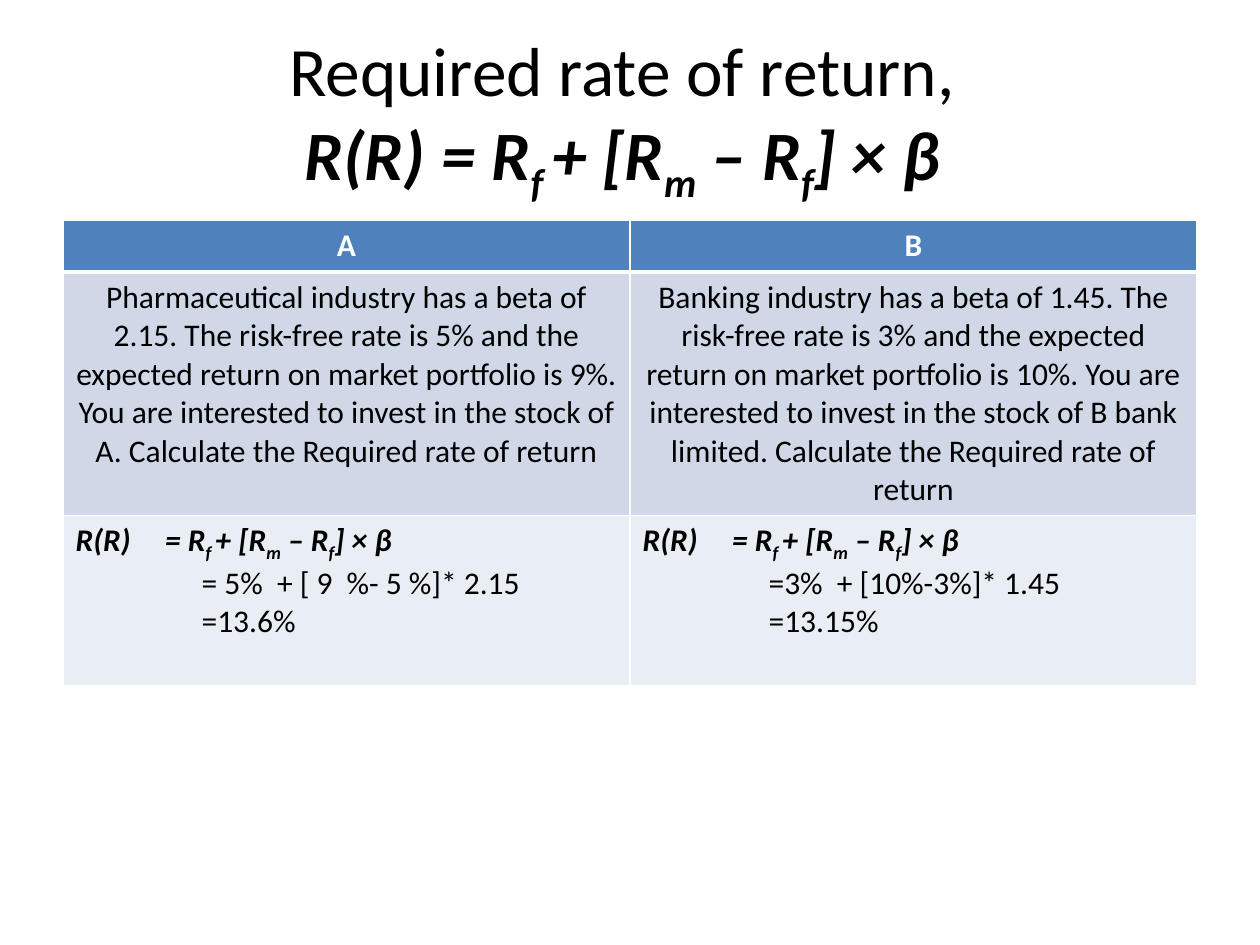
from lxml.etree import SubElement
from pptx import Presentation
from pptx.dml.color import RGBColor
from pptx.enum.text import MSO_ANCHOR, PP_ALIGN
from pptx.oxml.ns import qn
from pptx.util import Inches, Pt

BLACK = RGBColor(0x00, 0x00, 0x00)
WHITE = RGBColor(0xFF, 0xFF, 0xFF)
HEADER_BLUE = RGBColor(0x4F, 0x81, 0xBD)
QUESTION_BLUE = RGBColor(0xD0, 0xD8, 0xE8)
ANSWER_BLUE = RGBColor(0xE9, 0xED, 0xF4)

BOLD = {"bold": True}
FORMULA = {"bold": True, "italic": True}
FORMULA_TAIL = [("f ", True), ("+ [R", False), ("m", True),
                (" – R", False), ("f", True)]
TITLE_FORMULA = [("R(R) = R", False), *FORMULA_TAIL, ("] × β ", False)]
ANSWER_FORMULA = [("R(R)\t= R", False), *FORMULA_TAIL, ("] × β", False)]

QUESTIONS = [
    "Pharmaceutical industry has a beta of 2.15. The risk-free rate is 5% and "
    "the expected return on market portfolio is 9%. You are interested to "
    "invest in the stock of A. Calculate the Required rate of return",
    "Banking industry has a beta of 1.45. The risk-free rate is 3% and the "
    "expected return on market portfolio is 10%. You are interested to invest "
    "in the stock of B bank limited. Calculate the Required rate of return",
]
ANSWERS = [
    ["= 5%  + [ 9  %- 5 %]* 2.15", "=13.6%"],
    ["=3%  + [10%-3%]* 1.45", "=13.15%"],
]


class SlideBuilder:
    font_name = "Calibri"

    def __init__(self, slide):
        self.slide = slide

    def run(self, paragraph, text, size, color=BLACK, style=None, subscript=False):
        run = paragraph.add_run()
        run.text = text
        values = {"name": self.font_name, "size": Pt(size), **(style or {})}
        for name, value in values.items():
            setattr(run.font, name, value)
        run.font.color.rgb = color
        if subscript:
            run._r.get_or_add_rPr().set("baseline", "-25000")

    def formula(self, paragraph, parts, size):
        for text, subscript in parts:
            self.run(paragraph, text, size, style=FORMULA, subscript=subscript)

    def title(self, text, parts, left, top, width, height):
        shape = self.slide.shapes.add_textbox(left, top, width, height)
        frame = shape.text_frame
        frame.word_wrap = True
        frame.vertical_anchor = MSO_ANCHOR.MIDDLE
        paragraph = frame.paragraphs[0]
        paragraph.alignment = PP_ALIGN.CENTER
        self.run(paragraph, text, 39.6)
        paragraph.add_line_break()
        self.formula(paragraph, parts, 39.6)

    def table(self, left, top, column_widths, row_heights):
        shape = self.slide.shapes.add_table(
            len(row_heights), len(column_widths), left, top,
            sum(column_widths), sum(row_heights))
        table = shape.table
        for column, width in zip(table.columns, column_widths):
            column.width = width
        for row, height in zip(table.rows, row_heights):
            row.height = height
        return table

    def cell(self, cell, fill, top_border=1, bottom_border=1):
        properties = cell._tc.get_or_add_tcPr()
        borders = {"L": 1, "R": 1, "T": top_border, "B": bottom_border}
        for side, width in borders.items():
            line = SubElement(properties, qn(f"a:ln{side}"), w=str(Pt(width)))
            line_fill = SubElement(line, qn("a:solidFill"))
            SubElement(line_fill, qn("a:srgbClr"), val=str(WHITE))
        cell.fill.solid()
        cell.fill.fore_color.rgb = fill
        return cell.text_frame

    def centered_cell(self, cell, text, fill, color=BLACK, style=None, **borders):
        paragraph = self.cell(cell, fill, **borders).paragraphs[0]
        paragraph.alignment = PP_ALIGN.CENTER
        self.run(paragraph, text, 18, color, style or {"bold": False})

    def answer_cell(self, cell, parts, steps, fill):
        frame = self.cell(cell, fill)
        paragraph = frame.paragraphs[0]
        tabs = SubElement(paragraph._p.get_or_add_pPr(), qn("a:tabLst"))
        SubElement(tabs, qn("a:tab"), pos=str(Inches(0.71)), algn="l")
        self.formula(paragraph, parts, 18)
        for step in steps:
            paragraph = frame.add_paragraph()
            paragraph._p.get_or_add_pPr().set("marL", str(Inches(1)))
            self.run(paragraph, step, 18, style={"bold": False})


def main():
    presentation = Presentation()
    presentation.slide_width = Inches(10)
    presentation.slide_height = Inches(7.5)
    builder = SlideBuilder(presentation.slides.add_slide(presentation.slide_layouts[6]))

    builder.title("Required rate of return, ", TITLE_FORMULA,
                  Inches(0.5), Inches(0.3), Inches(9), Inches(1.25))
    table = builder.table(Inches(0.5), Inches(1.75), [Inches(4.5)] * 2,
                          [Inches(0.41), Inches(1.93), Inches(1.35)])
    for column, heading in enumerate("AB"):
        builder.centered_cell(table.cell(0, column), heading, HEADER_BLUE,
                              WHITE, BOLD, bottom_border=3)
        builder.centered_cell(table.cell(1, column), QUESTIONS[column],
                              QUESTION_BLUE, top_border=3)
        builder.answer_cell(table.cell(2, column), ANSWER_FORMULA,
                            ANSWERS[column], ANSWER_BLUE)
    presentation.save("out.pptx")


if __name__ == "__main__":
    main()
